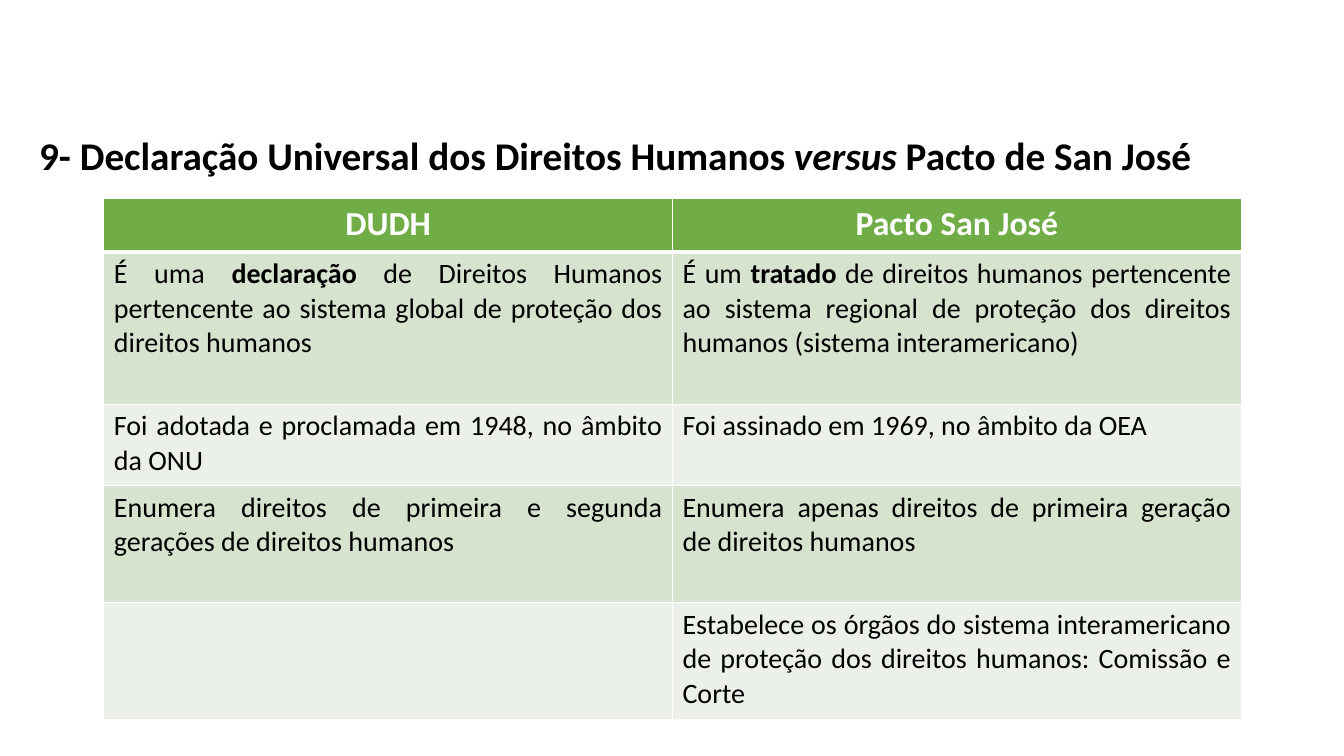
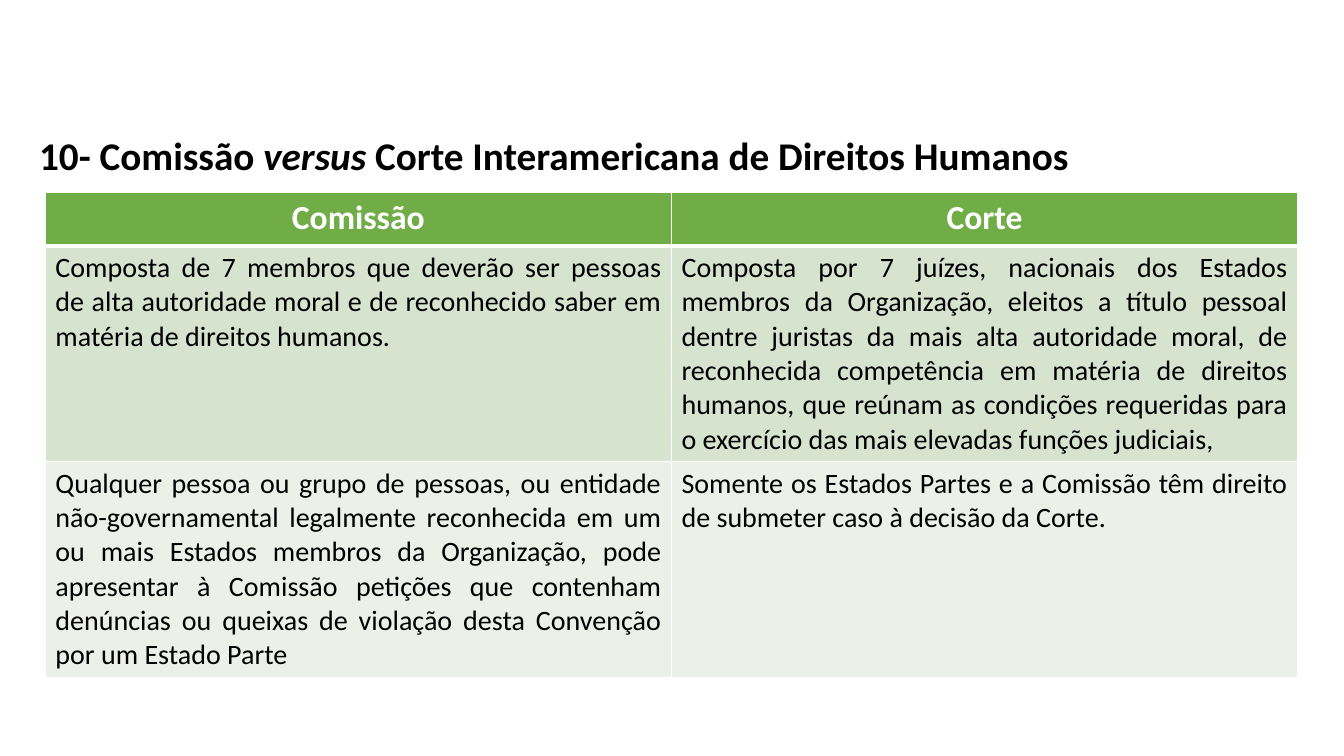
from dataclasses import dataclass

from lxml.etree import SubElement as Sub
from pptx import Presentation
from pptx.dml.color import RGBColor as RGB
from pptx.enum.text import PP_ALIGN as Align
from pptx.oxml.ns import qn
from pptx.util import Pt

SCALE = 9144


@dataclass(frozen=True)
class Theme:
    font: str = "Calibri"
    ink: str = "000000"
    white: str = "FFFFFF"
    green: str = "70AD47"
    bands: tuple = ("D5E3CF", "EBF1E9")
    title: int = 28
    head: int = 24
    body: int = 20
    thin: int = 1
    thick: int = 3


THEME = Theme()


def px(num):
    return num * SCALE


def write(para, text, size, color, bold, accent):
    for spot, part in enumerate(text.split("*")):
        if not part:
            continue
        run = para.add_run()
        run.text = part
        font = run.font
        font.name, font.size, font.bold = THEME.font, Pt(size), bold
        font.color.rgb = RGB.from_string(color)
        if spot % 2:
            setattr(font, accent, True)


def add_title(slide, text):
    box = slide.shapes.add_textbox(px(29), px(131), px(1276), px(54))
    frame = box.text_frame
    frame.word_wrap = True
    para = frame.paragraphs[0]
    para.alignment = Align.JUSTIFY
    para.line_spacing = 0.9
    write(para, text, THEME.title, THEME.ink, True, "italic")


def add_edge(cell, side, width):
    line = Sub(cell._tc.get_or_add_tcPr(), qn(f"a:ln{side}"), w=str(Pt(width)))
    fill = Sub(line, qn("a:solidFill"))
    Sub(fill, qn("a:srgbClr"), val=THEME.white)


def style_cell(cell, text, row):
    is_head = row == 0
    widths = {
        "L": THEME.thin,
        "R": THEME.thin,
        "T": THEME.thick if row == 1 else THEME.thin,
        "B": THEME.thick if is_head else THEME.thin,
    }
    for side, width in widths.items():
        add_edge(cell, side, width)
    fill = THEME.green if is_head else THEME.bands[(row - 1) % 2]
    cell.fill.solid()
    cell.fill.fore_color.rgb = RGB.from_string(fill)
    para = cell.text_frame.paragraphs[0]
    para.alignment = Align.CENTER if is_head else Align.JUSTIFY
    size = THEME.head if is_head else THEME.body
    color = THEME.white if is_head else THEME.ink
    write(para, text, size, color, is_head, "bold")


def add_grid(slide, left, top, width, highs, rows):
    count = len(rows[0])
    frame = slide.shapes.add_table(
        len(rows), count, px(left), px(top), px(width * count), px(sum(highs))
    )
    table = frame.table
    for col in table.columns:
        col.width = px(width)
    for row, (high, texts) in enumerate(zip(highs, rows)):
        table.rows[row].height = px(high)
        for col, text in enumerate(texts):
            style_cell(table.cell(row, col), text, row)


def add_page(deck, title, left, top, width, highs, rows):
    slide = deck.slides.add_slide(deck.slide_layouts[6])
    add_title(slide, title)
    add_grid(slide, left, top, width, highs, rows)


def main():
    deck = Presentation()
    deck.slide_width, deck.slide_height = px(1333), px(750)
    add_page(
        deck,
        "9- Declaração Universal dos Direitos Humanos *versus *Pacto de San José",
        103, 197, 564, (53, 151, 81, 116, 116),
        (
            ("DUDH", "Pacto San José"),
            (
                "É uma *declaração* de Direitos Humanos pertencente ao sistema "
                "global de proteção dos direitos humanos",
                "É um *tratado* de direitos humanos pertencente ao sistema "
                "regional de proteção dos direitos humanos (sistema "
                "interamericano)",
            ),
            (
                "Foi adotada e proclamada em 1948, no âmbito da ONU",
                "Foi assinado em 1969, no âmbito da OEA",
            ),
            (
                "Enumera direitos de primeira e segunda gerações de direitos "
                "humanos",
                "Enumera apenas direitos de primeira geração de direitos humanos",
            ),
            (
                "",
                "Estabelece os órgãos do sistema interamericano de proteção dos "
                "direitos humanos: Comissão e Corte",
            ),
        ),
    )
    add_page(
        deck,
        "10- Comissão *versus *Corte Interamericana de Direitos Humanos",
        45, 191, 621, (53, 214, 214),
        (
            ("Comissão", "Corte"),
            (
                "Composta de 7 membros que deverão ser pessoas de alta "
                "autoridade moral e de reconhecido saber em matéria de direitos "
                "humanos.",
                "Composta por 7 juízes, nacionais dos Estados membros da "
                "Organização, eleitos a título pessoal dentre juristas da mais "
                "alta autoridade moral, de reconhecida competência em matéria "
                "de direitos humanos, que reúnam as condições requeridas para o "
                "exercício das mais elevadas funções judiciais,",
            ),
            (
                "Qualquer pessoa ou grupo de pessoas, ou entidade "
                "não-governamental legalmente reconhecida em um ou mais Estados "
                "membros da Organização, pode apresentar à Comissão petições "
                "que contenham denúncias ou queixas de violação desta Convenção "
                "por um Estado Parte",
                "Somente os Estados Partes e a Comissão têm direito de submeter "
                "caso à decisão da Corte.",
            ),
        ),
    )
    deck.save("out.pptx")


if __name__ == "__main__":
    main()
